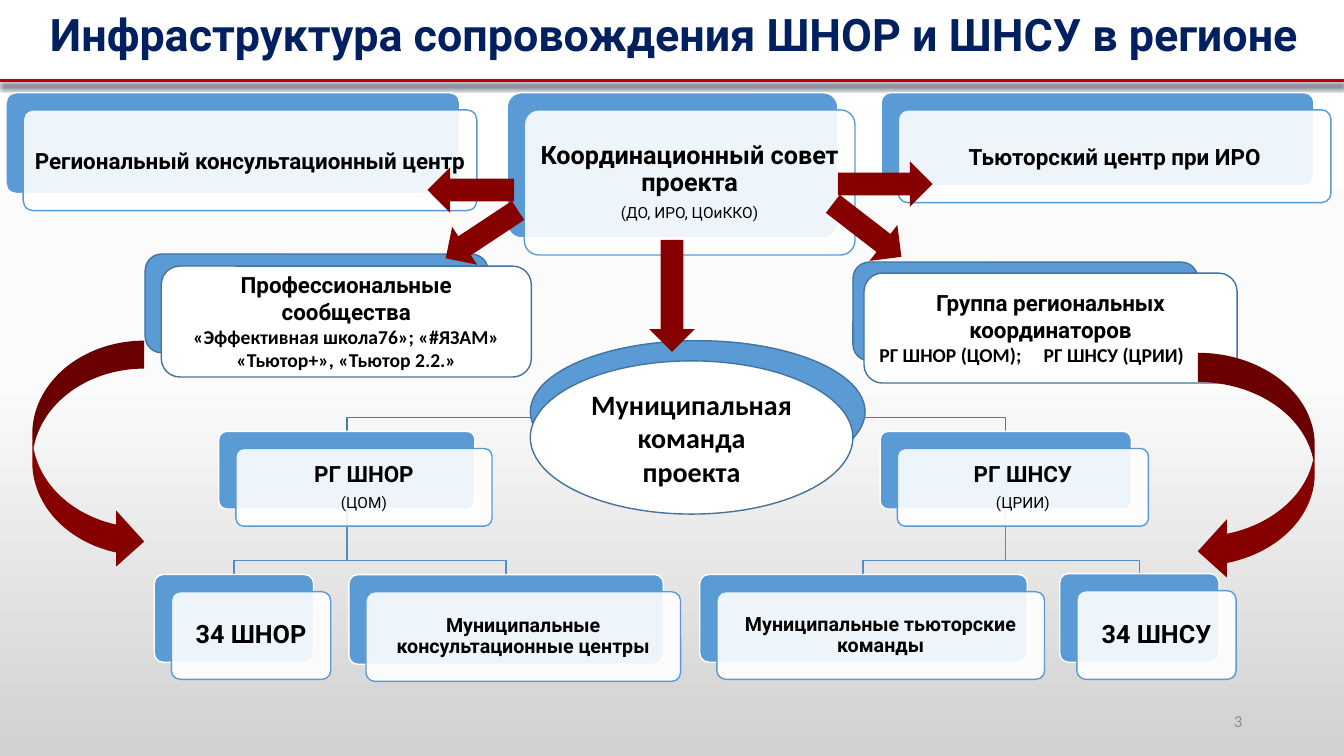
from copy import deepcopy
from dataclasses import dataclass

from lxml import etree
from pptx import Presentation
from pptx.dml.color import RGBColor
from pptx.enum.shapes import MSO_CONNECTOR, MSO_SHAPE
from pptx.enum.text import MSO_ANCHOR, PP_ALIGN
from pptx.oxml.ns import qn
from pptx.util import Pt

PX = 9144
ROUND, OVAL = MSO_SHAPE.ROUNDED_RECTANGLE, MSO_SHAPE.OVAL
LEFT_ARROW, RIGHT_ARROW = MSO_SHAPE.LEFT_ARROW, MSO_SHAPE.RIGHT_ARROW
CURVE_LEFT, CURVE_RIGHT = MSO_SHAPE.CURVED_LEFT_ARROW, MSO_SHAPE.CURVED_RIGHT_ARROW
STRAIGHT = MSO_CONNECTOR.STRAIGHT
TOP, MIDDLE = MSO_ANCHOR.TOP, MSO_ANCHOR.MIDDLE
LEFT, CENTER, RIGHT = PP_ALIGN.LEFT, PP_ALIGN.CENTER, PP_ALIGN.RIGHT


@dataclass(frozen=True)
class Theme:
    blue: str = "5B9BD5"
    edge: str = "43739E"
    link: str = "538DC1"
    trunk: str = "497CAB"
    white: str = "FFFFFF"
    black: str = "000000"
    navy: str = "002060"
    red: str = "C00000"
    arrow: str = "860000"
    shade: str = "333F50"
    gray: str = "8C8C8C"
    sky: tuple = ((0, "FFFFFF"), (0.5, "FBFBFB"), (1, "D1D1D1"))
    head: str = "Roboto"
    body: str = "Calibri"
    title: int = 32
    team: int = 20
    large: int = 18
    mid: int = 16
    small: int = 14
    page: int = 12
    note: int = 11


def put(frame, text, *, size, color, font, bold=True, align=CENTER,
        line=None, after=None, tab=None):
    first = frame.paragraphs[0]
    para = first if not first.runs else frame.add_paragraph()
    para.alignment = align
    if line:
        para.line_spacing = line
    if after:
        para.space_after = Pt(after)
    if tab:
        stops = etree.SubElement(para._p.get_or_add_pPr(), qn("a:tabLst"))
        etree.SubElement(stops, qn("a:tab"), pos=str(tab * PX), algn="l")
    run = para.add_run()
    run.text = text
    run.font.size, run.font.name, run.font.bold = Pt(size), font, bold
    run.font.color.rgb = RGBColor.from_string(color)


class Board:
    """Draws styled elements on the current slide."""

    def __init__(self, slide, theme):
        self.slide, self.theme = slide, theme

    def sky(self):
        fill = self.slide.background.fill
        fill.gradient()
        fill.gradient_angle = 270
        stops = self.slide.element.find(".//" + qn("a:gsLst"))
        stops.append(deepcopy(stops[-1]))
        for stop, (place, color) in zip(fill.gradient_stops, self.theme.sky):
            stop.position = place
            stop.color.rgb = RGBColor.from_string(color)

    def frame(self, shape, side, edge, anchor=MIDDLE):
        frame = shape.text_frame
        frame.word_wrap, frame.vertical_anchor = True, anchor
        frame.margin_left = frame.margin_right = side * PX
        frame.margin_top = frame.margin_bottom = edge * PX
        return frame

    def label(self, box, text, anchor=MIDDLE, **style):
        shape = self.slide.shapes.add_textbox(*(v * PX for v in box))
        put(self.frame(shape, 10, 7, anchor), text, **style)

    def shape(self, kind, box, fill, line=None, turn=0, round=None, alpha=None):
        shape = self.slide.shapes.add_shape(kind, *(v * PX for v in box))
        shape.shadow.inherit = False
        shape.rotation = turn
        shape.fill.solid()
        shape.fill.fore_color.rgb = RGBColor.from_string(fill)
        if line:
            shape.line.color.rgb = RGBColor.from_string(line)
            shape.line.width = Pt(1)
        else:
            shape.line.fill.background()
        if round:
            shape.adjustments[0] = round
        if alpha:
            tint = shape.element.find(f".//{qn('a:solidFill')}/{qn('a:srgbClr')}")
            etree.SubElement(tint, qn("a:alpha"), val=str(alpha * 1000))
        return shape

    def card(self, x, y, w, h, text, size, note=None, line=0.9):
        t = self.theme
        self.shape(ROUND, (x, y, w, h), t.blue, t.white, round=0.1)
        front = self.shape(ROUND, (x + 17, y + 17, w, h), t.white, t.blue,
                           round=0.1, alpha=90)
        frame = self.frame(front, 7, 7)
        rows = [(text, size, True)] + ([(note, t.note, False)] if note else [])
        for words, points, bold in rows:
            after = round(points * 0.35) if line else None
            put(frame, words, size=points, color=t.black, font=t.head,
                bold=bold, line=line, after=after)

    def group(self, back, front, text, rows, **style):
        t = self.theme
        self.shape(ROUND, back, t.blue, t.edge)
        frame = self.frame(self.shape(ROUND, front, t.white, t.edge), 10, 5)
        put(frame, text, size=t.mid, color=t.black, font=t.head)
        for row in rows:
            put(frame, row, size=t.small, color=t.black, font=t.body, **style)

    def team(self, back, front, text):
        t = self.theme
        self.shape(OVAL, back, t.blue, t.edge)
        frame = self.frame(self.shape(OVAL, front, t.white, t.edge), 13, 7)
        put(frame, text, size=t.team, color=t.black, font=t.body)

    def elbow(self, start, end, color):
        (x, y), (to, low) = start, end
        pen = self.slide.shapes.build_freeform(x, y, scale=PX)
        pen.add_line_segments([(x, low - 14), (to, low - 14), (to, low)], close=False)
        shape = pen.convert_to_shape()
        shape.shadow.inherit = False
        shape.fill.background()
        shape.line.color.rgb = RGBColor.from_string(color)
        shape.line.width = Pt(1)

    def rule(self, y, width):
        t = self.theme
        line = self.slide.shapes.add_connector(STRAIGHT, 0, y * PX, width * PX, y * PX)
        line.line.color.rgb = RGBColor.from_string(t.red)
        line.line.width = Pt(2.5)
        glow = etree.SubElement(line.element.spPr, qn("a:effectLst"))
        cast = etree.SubElement(glow, qn("a:outerShdw"), blurRad=str(Pt(4)),
                                dist=str(Pt(3)), dir="5400000", algn="t",
                                rotWithShape="0")
        etree.SubElement(cast, qn("a:srgbClr"), val=t.shade)


def main():
    deck = Presentation()
    deck.slide_width, deck.slide_height = 1333 * PX, 750 * PX
    t = Theme()
    board = Board(deck.slides.add_slide(deck.slide_layouts[6]), t)
    board.sky()
    board.label((942, 695, 300, 40), "3", size=t.page, color=t.gray,
                font=t.body, bold=False, align=RIGHT)
    board.rule(80, 1333)

    for hub, leaves in ((344, (232, 502)), (997, (856, 1130))):
        board.elbow((667, 236), (hub, 428), t.trunk)
        for leaf in leaves:
            board.elbow((hub, 505), (leaf, 570), t.link)

    cards = (
        (6, 92, 450, 100, "Региональный консультационный центр", t.mid, None, None),
        (503, 92, 328, 144, "Координационный совет проекта", t.large,
         "(ДО, ИРО, ЦОиККО)"),
        (217, 428, 254, 77, "РГ ШНОР", t.mid, "(ЦОМ)"),
        (153, 570, 158, 87, "34 ШНОР", t.large),
        (346, 570, 312, 89, "Муниципальные консультационные центры", t.small),
        (873, 428, 249, 77, "РГ ШНСУ", t.mid, "(ЦРИИ)"),
        (694, 570, 325, 87, "Муниципальные тьюторские команды", t.small),
        (1051, 569, 158, 88, "34 ШНСУ", t.large),
        (874, 92, 429, 92, "Тьюторский центр при ИРО", t.mid, None, None),
    )
    for card in cards:
        board.card(*card)

    board.team((526, 338, 332, 141), (526, 358, 320, 152),
               "Муниципальная команда проекта")
    board.label((5, 0, 1328, 67), "Инфраструктура сопровождения ШНОР и ШНСУ в регионе",
                anchor=TOP, size=t.title, color=t.navy, font=t.head)
    board.group((144, 252, 340, 98), (160, 264, 367, 110),
                "Профессиональные сообщества",
                ("«Эффективная школа76»; «#ЯЗАМ»", "«Тьютор+», «Тьютор 2.2.»"))
    board.group((846, 260, 342, 98), (857, 271, 370, 109),
                "Группа региональных координаторов",
                ("РГ ШНОР (ЦОМ);\tРГ ШНСУ (ЦРИИ)",), align=LEFT, tab=163)

    arrows = (
        (RIGHT_ARROW, (831, 160, 94, 45), 0),
        (LEFT_ARROW, (424, 166, 86, 45), 0),
        (LEFT_ARROW, (435, 210, 86, 45), 326.5),
        (LEFT_ARROW, (817, 206, 86, 45), 217.7),
        (LEFT_ARROW, (611, 271, 111, 45), 270),
        (CURVE_RIGHT, (32, 338, 111, 227), 0),
        (CURVE_LEFT, (1188, 350, 116, 226), 0),
    )
    for kind, box, turn in arrows:
        board.shape(kind, box, t.arrow, turn=turn)
    deck.save("out.pptx")


if __name__ == "__main__":
    main()
